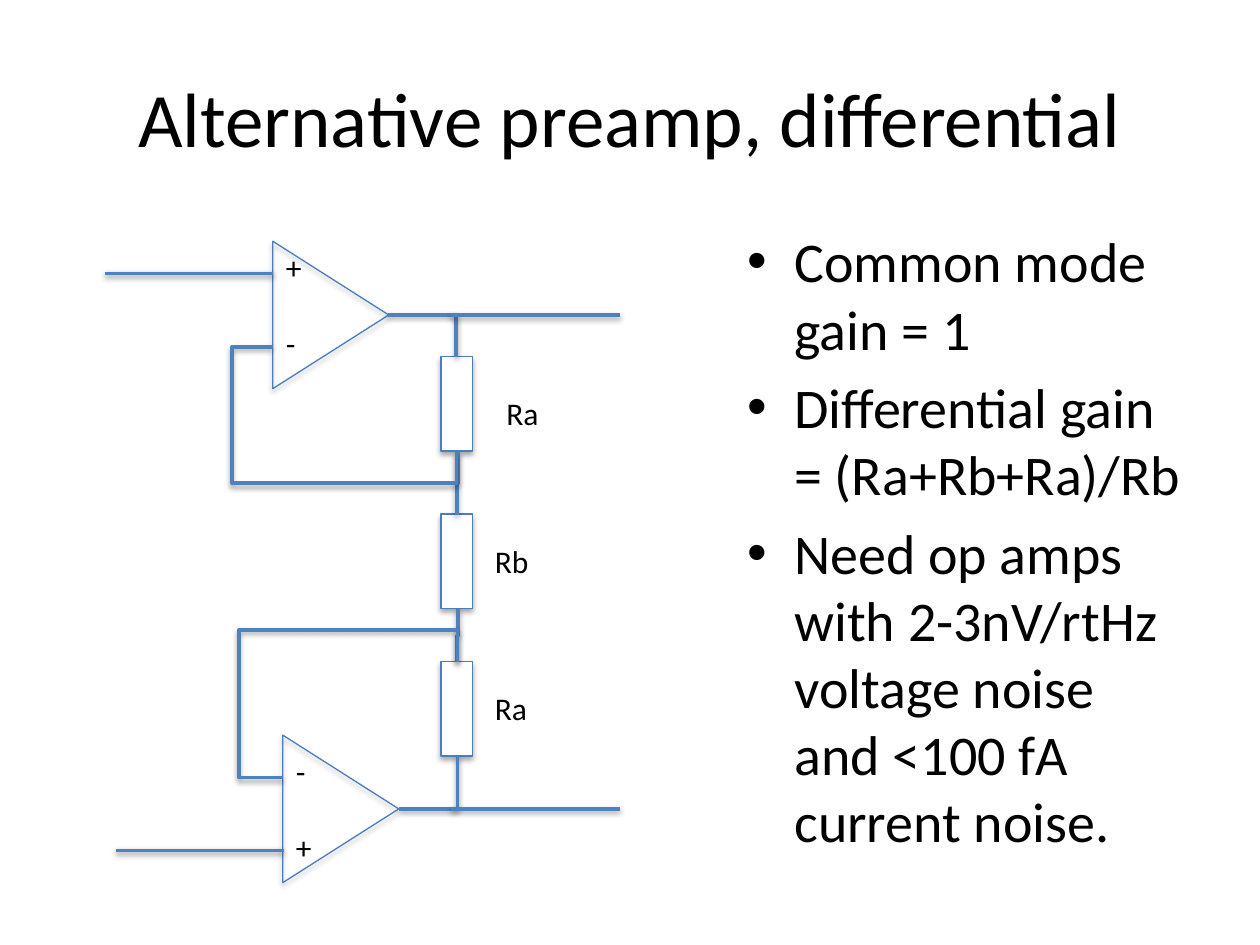
from pptx import Presentation
from pptx.dml.color import RGBColor
from pptx.enum.shapes import MSO_CONNECTOR, MSO_SHAPE
from pptx.enum.text import MSO_AUTO_SIZE
from pptx.util import Inches, Pt

STRAIGHT, ELBOW = MSO_CONNECTOR.STRAIGHT, MSO_CONNECTOR.ELBOW
TRIANGLE, RECTANGLE = MSO_SHAPE.ISOSCELES_TRIANGLE, MSO_SHAPE.RECTANGLE
FONT, BLACK, WHITE = "Calibri", "000000", "FFFFFF"
OUTLINE, WIRE = "4B7EBC", "4F81BD"

# Content
TITLE = "Alternative preamp, differential"
BULLETS = [
    "Common mode gain = 1",
    "Differential gain = (Ra+Rb+Ra)/Rb",
    "Need op amps with 2-3nV/rtHz voltage noise and <100 fA current noise.",
]
# Op amps: left, top of the unrotated triangle, then input signs
AMPS = [(2.04, 2.04, "+-"), (2.12, 5.96, "-+")]
AMP_W, AMP_H = 1.17, 0.92
# Resistors: top, label, label left
RESISTORS = [(2.83, "Ra", 3.92), (4.08, "Rb", 3.83), (5.25, "Ra", 3.83)]
RES_X, RES_W, RES_H = 3.5, 0.25, 0.75
# Straight wires: from x, to x, y
STRAIGHT_WIRES = [(2.17, 0.83, 2.17), (2.25, 0.92, 6.75),
                  (4.92, 3.58, 6.42), (4.92, 3.58, 2.5)]
# Bent wires: unrotated start and end, rotation, number of segments, adjustments
BENT_WIRES = [
    ((3.08, 2.5), (3.62, 2.83), 0, 2, []),
    ((3.19, 5.98), (3.61, 6.44), 90, 2, []),
    ((3.84, 5.05), (3.42, 5.04), 90, 3, [0.5]),
    ((3.38, 3.83), (3.88, 3.84), 90, 3, [0.5]),
    ((3.4, 6.4), (2.48, 5.02), 270, 4, [-0.273, 1.255]),
    ((3.31, 2.44), (2.48, 3.9), 90, 4, [-0.3, 1.222]),
]


def color(value):
    return RGBColor.from_string(value)


def set_font(p, size):
    p.font.name, p.font.size = FONT, Pt(size)
    p.font.color.rgb = color(BLACK)


def place(s, *box):
    s.left, s.top, s.width, s.height = map(Inches, box)


def add_part(shapes, kind, x, y, w, h, fill=None):
    # Parts keep the soft shadow of the theme
    s = shapes.add_shape(kind, *map(Inches, (x, y, w, h)))
    if fill:
        s.fill.solid()
        s.fill.fore_color.rgb = color(fill)
    else:
        s.fill.background()
    s.line.color.rgb, s.line.width = color(OUTLINE), Pt(0.75)
    return s


def add_wire(shapes, start, end, kind=STRAIGHT):
    s = shapes.add_connector(kind, *map(Inches, start + end))
    s.line.color.rgb, s.line.width = color(WIRE), Pt(2)
    return s


def add_bent_wire(shapes, start, end, rotation, segments, adjustments):
    sp_pr = add_wire(shapes, start, end, ELBOW)._element.spPr
    sp_pr.xfrm.set("rot", str(rotation * 60000))
    geom = sp_pr.prstGeom
    geom.set("prst", f"bentConnector{segments}")
    guides = geom.get_or_add_avLst()
    for i, value in enumerate(adjustments, 1):
        gd = guides._add_gd()
        gd.set("name", f"adj{i}" if segments > 3 else "adj1")
        gd.set("fmla", f"val {round(value * 100000)}")


def add_label(shapes, x, y, w, h, lines, gap=0):
    tf = shapes.add_textbox(*map(Inches, (x, y, w, h))).text_frame
    tf.word_wrap, tf.auto_size = True, MSO_AUTO_SIZE.SHAPE_TO_FIT_TEXT
    tf.text = "\n".join(lines)
    for i, p in enumerate(tf.paragraphs):
        set_font(p, 18)
        p.space_before = Pt(gap if i else 0)


prs = Presentation()
prs.slide_width, prs.slide_height = Inches(10), Inches(7.5)
slide = prs.slides.add_slide(prs.slide_layouts[1])

# Title and bullets
title, body = slide.placeholders
place(title, 0.5, 0.3, 9, 1.25)
place(body, 5.83, 1.75, 3.67, 4.95)
for s, lines, size in ((title, [TITLE], 44), (body, BULLETS, 32)):
    s.text_frame.text = "\n".join(lines)
    for p in s.text_frame.paragraphs:
        set_font(p, size)

# Circuit parts
circuit = slide.shapes.add_group_shape().shapes
for x, y, _ in AMPS:
    add_part(circuit, TRIANGLE, x, y, AMP_W, AMP_H).rotation = 90
for y, _, _ in RESISTORS:
    add_part(circuit, RECTANGLE, RES_X, y, RES_W, RES_H, WHITE)

# Wires
for wire in BENT_WIRES:
    add_bent_wire(circuit, *wire)
for x1, x2, y in STRAIGHT_WIRES:
    add_wire(circuit, (x1, y), (x2, y))

# Labels
for y, text, x in RESISTORS:
    add_label(circuit, x, y + (0.25 if y < 4 else 0.17), 1, 0.4, [text])
for x, y, signs in AMPS:
    add_label(circuit, x + 0.13, y - (0.12 if y < 4 else 0.04), 0.33, 1.01, signs, gap=22)

prs.save("out.pptx")
